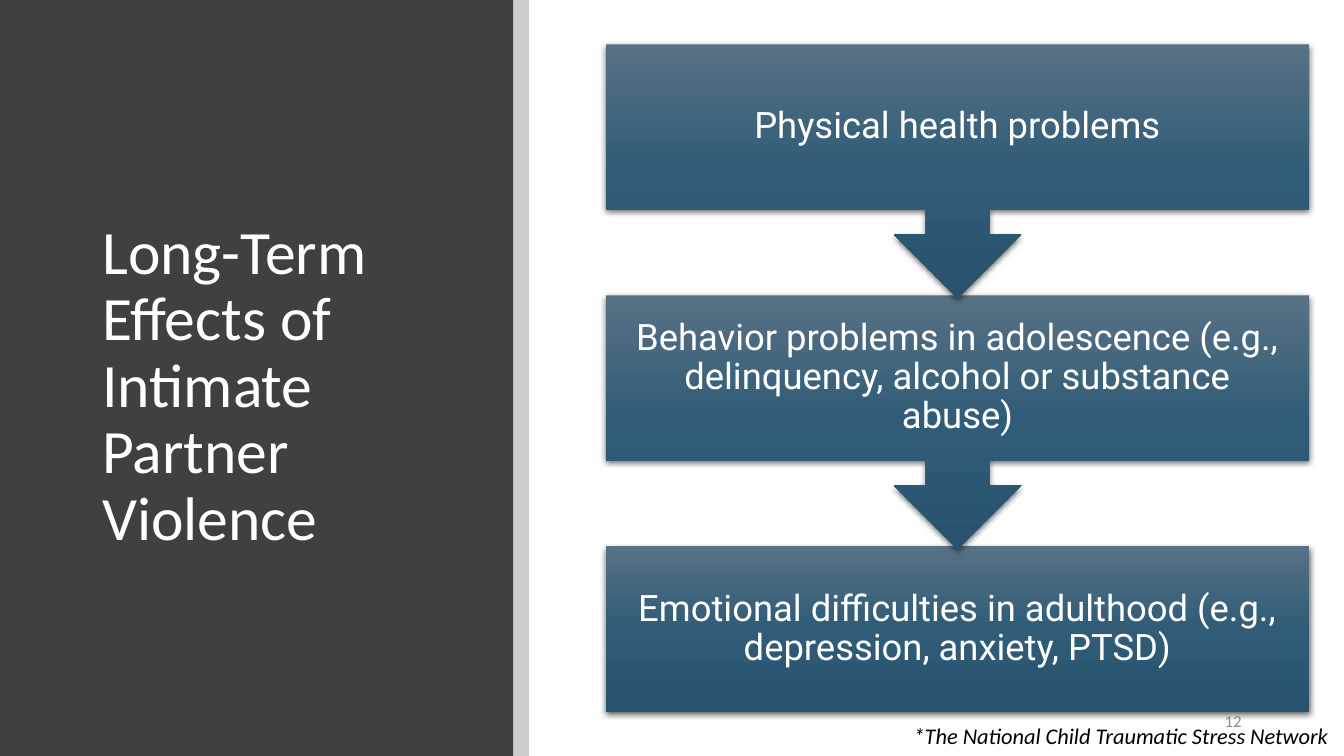
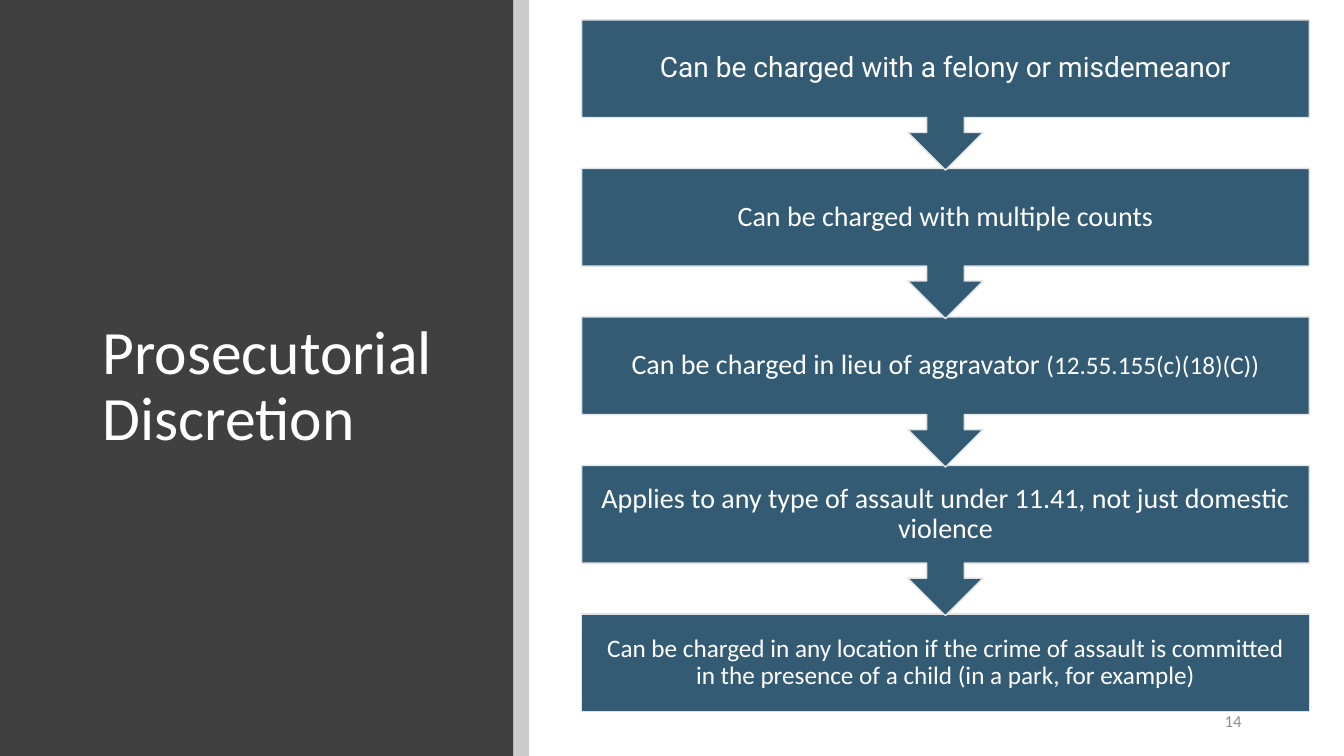
from copy import deepcopy

from lxml.etree import SubElement
from pptx import Presentation
from pptx.dml.color import RGBColor
from pptx.enum.shapes import MSO_SHAPE
from pptx.enum.text import MSO_ANCHOR, PP_ALIGN
from pptx.oxml.ns import qn
from pptx.util import Pt

DARK, WHITE, BLACK, GREY = "404040", "FFFFFF", "000000", "8C8C8C"
STEEL, EDGE = "335B74", "DFE3E5"
FADE = [(0, "577185"), (0.5, "305C77"), (1, "28526D")]

# Steps hold a font and their runs of (text, size), from top to bottom.
DECK = [
    dict(
        title="Long-Term Effects of Intimate Partner Violence",
        page="12", note="*The National Child Traumatic Stress Network",
        left=432.7, top=31.7, width=502.6, pitch=179.3, tall=181.3, box=118,
        pad=14.4, fade=True,
        steps=[
            ("Roboto", [("Physical health problems", 26)]),
            ("Roboto", [("Behavior problems in adolescence (e.g., delinquency, "
                         "alcohol or substance abuse)", 26)]),
            ("Roboto", [("Emotional difficulties in adulthood (e.g., depression, "
                         "anxiety, PTSD)", 26)]),
        ],
    ),
    dict(
        title="Prosecutorial Discretion",
        page="14", note=None,
        left=415.5, top=14.2, width=519.7, pitch=106.1, tall=107.3, box=69.8,
        pad=11, fade=False,
        steps=[
            ("Roboto", [("Can be charged with a felony or misdemeanor", 20)]),
            ("Calibri", [("Can be charged with multiple counts", 20)]),
            ("Calibri", [("Can be charged in lieu of aggravator ", 20),
                         ("(12.55.155(c)(18)(C))", 18)]),
            ("Calibri", [("Applies to any type of assault under 11.41, "
                          "not just domestic violence", 20)]),
            ("Calibri", [("Can be charged in any location if the crime of assault is "
                          "committed in the presence of a child "
                          "(in a park, for example)", 18)]),
        ],
    ),
]


def rgb(code):
    return RGBColor.from_string(code)


def write(shape, runs, font="Calibri", color=WHITE, align=PP_ALIGN.LEFT,
          anchor=MSO_ANCHOR.MIDDLE, space=1, italic=False, wrap=True):
    """Fill a shape with one paragraph of (text, size) runs."""
    frame = shape.text_frame
    frame.word_wrap = wrap
    frame.vertical_anchor = anchor
    para = frame.paragraphs[0]
    para.alignment = align
    para.line_spacing = space
    for text, size in runs:
        run = para.add_run()
        run.text = text
        run.font.name = font
        run.font.size = Pt(size)
        run.font.italic = italic
        run.font.color.rgb = rgb(color)


prs = Presentation()
prs.slide_width, prs.slide_height = Pt(960), Pt(540)

for data in DECK:
    slide = prs.slides.add_slide(prs.slide_layouts[6])
    shapes = slide.shapes

    # Side panel, its translucent strip and the title
    for left, width, color in [(0, 366.5, DARK), (366.5, 11.5, BLACK)]:
        band = shapes.add_shape(MSO_SHAPE.RECTANGLE, Pt(left), 0, Pt(width), Pt(540))
        band.shadow.inherit = False
        band.fill.solid()
        band.fill.fore_color.rgb = rgb(color)
        band.line.fill.background()
    tint = band.fill._xPr.find(".//" + qn("a:srgbClr"))
    SubElement(tint, qn("a:alpha"), val="20000")
    title = shapes.add_textbox(Pt(66), Pt(64), Pt(263), Pt(425.5))
    write(title, [(data["title"], 44)], space=0.9)

    # Chain of steps, last one first so that each arrow overlaps the next box
    last = len(data["steps"]) - 1
    for i in range(last, -1, -1):
        font, runs = data["steps"][i]
        kind = MSO_SHAPE.RECTANGLE if i == last else MSO_SHAPE.DOWN_ARROW_CALLOUT
        step = shapes.add_shape(
            kind, Pt(data["left"]), Pt(data["top"] + i * data["pitch"]),
            Pt(data["width"]), Pt(data["box"] if i == last else data["tall"]))
        step.shadow.inherit = False
        if data["fade"]:
            step.fill.gradient()
            step.fill.gradient_angle = 270
            stops = step._element.spPr.find(".//" + qn("a:gsLst"))
            stops.append(deepcopy(stops[-1]))
            for stop, (place, color) in zip(step.fill.gradient_stops, FADE):
                stop.position = place
                stop.color.rgb = rgb(color)
            step.line.fill.background()
            glow = SubElement(
                step._element.spPr.find(qn("a:effectLst")), qn("a:outerShdw"),
                blurRad=str(Pt(4.5)), dist=str(Pt(1.5)), dir="5400000",
                algn="ctr", rotWithShape="0")
            shade = SubElement(glow, qn("a:srgbClr"), val=BLACK)
            SubElement(shade, qn("a:alpha"), val="63000")
        else:
            step.fill.solid()
            step.fill.fore_color.rgb = rgb(STEEL)
            step.line.color.rgb = rgb(EDGE)
            step.line.width = Pt(1)
        frame = step.text_frame
        frame.margin_left = frame.margin_right = Pt(data["pad"])
        frame.margin_top = frame.margin_bottom = Pt(data["pad"])
        write(step, runs, font=font, align=PP_ALIGN.CENTER, space=0.9)

    # Source note and page number
    if data["note"]:
        note = shapes.add_textbox(Pt(645.5), Pt(512), Pt(314.5), Pt(26.6))
        write(note, [(data["note"], 16)], color=BLACK, italic=True,
              anchor=MSO_ANCHOR.TOP, wrap=False)
    page = shapes.add_textbox(Pt(678), Pt(500.5), Pt(216), Pt(28.8))
    write(page, [(data["page"], 12)], color=GREY, align=PP_ALIGN.RIGHT)

prs.save("out.pptx")
